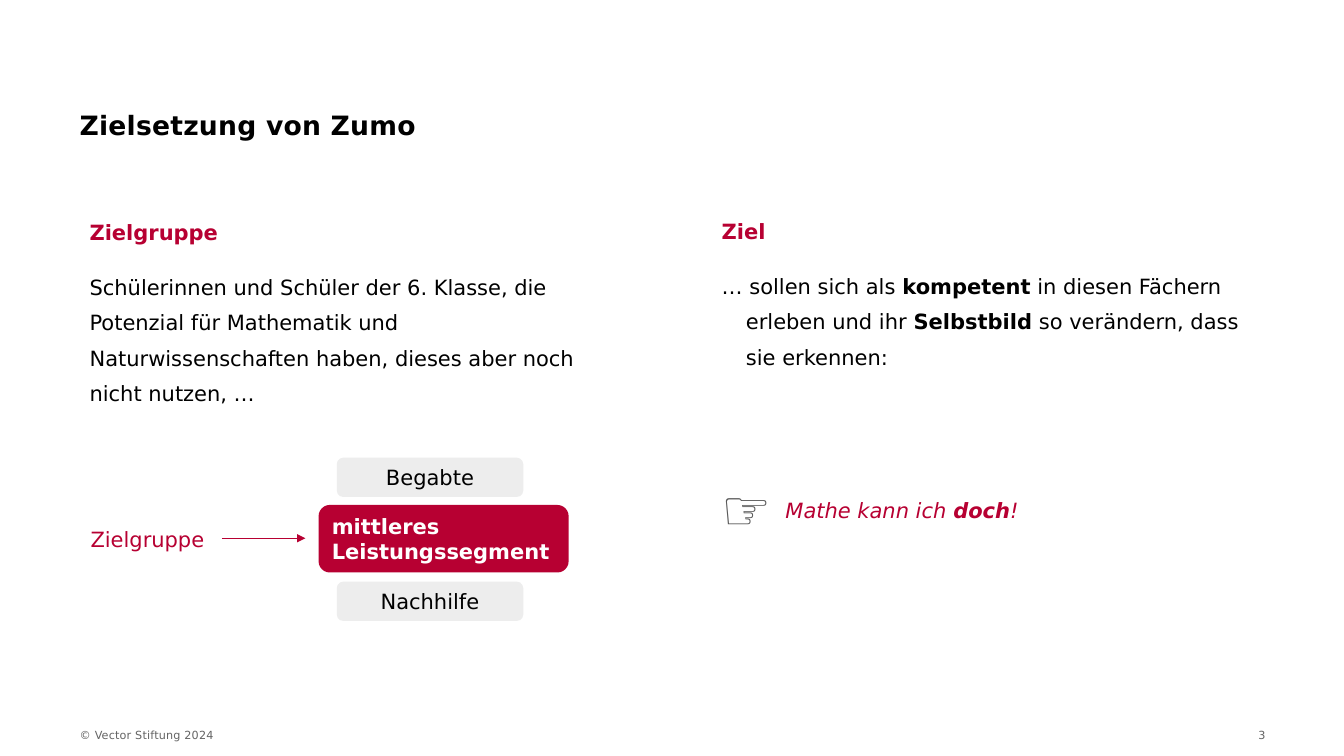
from lxml import etree
from pptx import Presentation
from pptx.dml.color import RGBColor
from pptx.enum.shapes import MSO_CONNECTOR, MSO_SHAPE
from pptx.enum.text import MSO_ANCHOR, PP_ALIGN
from pptx.oxml.ns import qn
from pptx.util import Inches, Pt

ROUNDED = MSO_SHAPE.ROUNDED_RECTANGLE
STRAIGHT = MSO_CONNECTOR.STRAIGHT
MIDDLE, TOP = MSO_ANCHOR.MIDDLE, MSO_ANCHOR.TOP
LEFT, CENTER, RIGHT = PP_ALIGN.LEFT, PP_ALIGN.CENTER, PP_ALIGN.RIGHT
FONT = "DejaVu Sans"
RED = RGBColor(0xB7, 0x00, 0x32)
BLACK = RGBColor(0x00, 0x00, 0x00)
WHITE = RGBColor(0xFF, 0xFF, 0xFF)
LIGHT_GRAY = RGBColor(0xED, 0xED, 0xED)
HAND_GRAY = RGBColor(0x59, 0x59, 0x59)
FOOTER_GRAY = RGBColor(0x64, 0x64, 0x64)

presentation = Presentation()
presentation.slide_width = Inches(13.33)
presentation.slide_height = Inches(7.5)
slide = presentation.slides.add_slide(presentation.slide_layouts[6])


def add_text_box(left, top, width, height, margin=True, anchor=TOP, wrap=True):
    frame = slide.shapes.add_textbox(
        Inches(left), Inches(top), Inches(width), Inches(height)).text_frame
    frame.word_wrap = wrap
    frame.vertical_anchor = anchor
    if not margin:
        frame.margin_left = frame.margin_right = 0
        frame.margin_top = frame.margin_bottom = 0
    return frame


def write(paragraph, parts, size, color, bold=False, align=LEFT, spacing=0):
    paragraph.alignment = align
    paragraph.font.name = FONT
    paragraph.font.size = Pt(size)
    paragraph.font.color.rgb = color
    if len(parts) == 1:
        paragraph.font.bold = bold
    for index, part in enumerate(parts):
        run = paragraph.add_run()
        run.text = part
        if index % 2:
            run.font.bold = True
        if spacing:
            run.font._element.set("spc", str(spacing))


title = add_text_box(0.79, 1.06, 11.76, 0.35, margin=False).paragraphs[0]
title.line_spacing = 1.05
write(title, ["Zielsetzung von Zumo"], 19, BLACK, bold=True, spacing=20)

columns = [
    (0.79, 2.03, "Zielgruppe", 0,
     ["Schülerinnen und Schüler der 6. Klasse, die Potenzial für Mathematik und "
      "Naturwissenschaften haben, dieses aber noch nicht nutzen, …"]),
    (7.06, 2.02, "Ziel", 0.24,
     ["… sollen sich als ", "kompetent", " in diesen Fächern erleben und ihr ",
      "Selbstbild", " so verändern, dass sie erkennen:"]),
]
for left, top, heading_text, indent, body_parts in columns:
    frame = add_text_box(left, top, 5.49, 2.05)
    heading = frame.paragraphs[0]
    body = frame.add_paragraph()
    heading.line_spacing = body.line_spacing = 1.4
    body.space_before = Pt(14)
    if indent:
        properties = body._p.get_or_add_pPr()
        properties.set("marL", str(Inches(indent)))
        properties.set("indent", str(-Inches(indent)))
    write(heading, [heading_text], 15, RED, bold=True)
    write(body, body_parts, 15, BLACK)

levels = [
    ("Begabte", 3.34, 4.54, 1.85, 0.39, LIGHT_GRAY, BLACK, False, CENTER),
    ("mittleres Leistungssegment", 3.16, 5.01, 2.48, 0.67, RED, WHITE, True, LEFT),
    ("Nachhilfe", 3.34, 5.77, 1.85, 0.39, LIGHT_GRAY, BLACK, False, CENTER),
]
for text, left, top, width, height, fill, color, bold, align in levels:
    shape = slide.shapes.add_shape(
        ROUNDED, Inches(left), Inches(top), Inches(width), Inches(height))
    shape.shadow.inherit = False
    shape.fill.solid()
    shape.fill.fore_color.rgb = fill
    shape.line.fill.background()
    shape.text_frame.word_wrap = True
    shape.text_frame.vertical_anchor = TOP
    write(shape.text_frame.paragraphs[0], [text], 15, color, bold, align)

label = add_text_box(0.8, 5.17, 1.33, 0.35, wrap=False).paragraphs[0]
write(label, ["Zielgruppe"], 15, RED)

arrow = slide.shapes.add_connector(
    STRAIGHT, Inches(2.2), Inches(5.34), Inches(3.03), Inches(5.34))
arrow.line.color.rgb = RED
arrow.line.width = Pt(0.5)
etree.SubElement(arrow.line._get_or_add_ln(), qn("a:tailEnd"), type="triangle")
etree.SubElement(arrow._element.spPr, qn("a:effectLst"))

table = slide.shapes.add_table(
    1, 2, Inches(7.06), Inches(4.69), Inches(5.02), Inches(0.77)).table
table.first_row = False
table.horz_banding = False
table.columns[0].width = Inches(0.63)
table.columns[1].width = Inches(4.39)
hand_cell, motto_cell = table.cell(0, 0), table.cell(0, 1)
for cell in (hand_cell, motto_cell):
    cell.fill.background()
    cell.vertical_anchor = MIDDLE
write(hand_cell.text_frame.paragraphs[0], ["☞"], 40, HAND_GRAY)
motto = motto_cell.text_frame.paragraphs[0]
write(motto, ["Mathe kann ich ", "doch", "!"], 15, RED)
motto.font.italic = True

page_number = add_text_box(11.76, 7.19, 0.79, 0.2, margin=False, anchor=MIDDLE)
write(page_number.paragraphs[0], ["3"], 8, FOOTER_GRAY, align=RIGHT)
footer = add_text_box(0.79, 7.19, 10.79, 0.2, margin=False, anchor=MIDDLE)
write(footer.paragraphs[0], ["© Vector Stiftung 2024"], 8, FOOTER_GRAY, spacing=10)

presentation.save("out.pptx")
